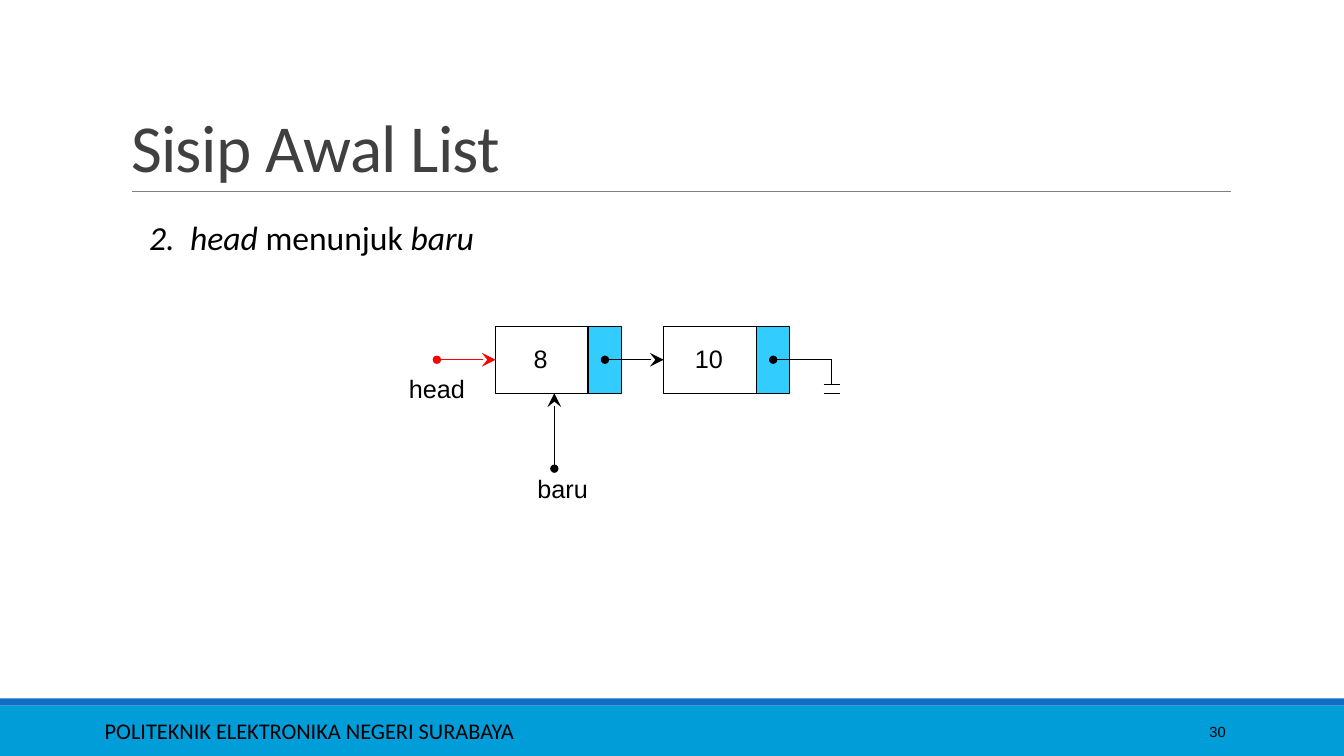
from lxml import etree
from pptx import Presentation
from pptx.dml.color import RGBColor
from pptx.enum import shapes, text
from pptx.oxml import ns
from pptx.util import Cm, Pt

BLACK = RGBColor(0x00, 0x00, 0x00)
RED = RGBColor(0xFF, 0x00, 0x00)
GREY = RGBColor(0x80, 0x80, 0x80)
TITLE_GREY = RGBColor(0x40, 0x40, 0x40)
POINTER_BLUE = RGBColor(0x33, 0xCC, 0xFF)
BAND_BLUE = RGBColor(0x00, 0x9D, 0xD9)
STRIPE_BLUE = RGBColor(0x0F, 0x6F, 0xC6)

deck = Presentation()
deck.slide_width, deck.slide_height = Cm(33.87), Cm(19.05)
page = deck.slides.add_slide(deck.slide_layouts[5])


def add_text(words, left, top, width, height, size, font="Arial",
             align=text.PP_ALIGN.CENTER, anchor=text.MSO_ANCHOR.TOP):
    box = page.shapes.add_textbox(Cm(left), Cm(top), Cm(width), Cm(height))
    frame = box.text_frame
    frame.word_wrap = True
    frame.vertical_anchor = anchor
    para = frame.paragraphs[0]
    para.text = words
    para.alignment = align
    para.font.size, para.font.name = Pt(size), font
    para.font.color.rgb = BLACK
    return para


def add_line(x1, y1, x2, y2, color=BLACK, width=0.75, dot=False, arrow=False):
    line = page.shapes.add_connector(
        shapes.MSO_CONNECTOR.STRAIGHT, Cm(x1), Cm(y1), Cm(x2), Cm(y2))
    line.line.color.rgb = color
    line.line.width = Pt(width)
    outline = line.line._get_or_add_ln()
    if dot:
        etree.SubElement(outline, ns.qn("a:headEnd"), type="oval")
    if arrow:
        etree.SubElement(outline, ns.qn("a:tailEnd"), type="stealth", w="lg", len="lg")
    etree.SubElement(line._element.spPr, ns.qn("a:effectLst"))


# Footer bands, footer text and page number
for top, height, color in ((17.78, 1.27, BAND_BLUE), (17.6, 0.18, STRIPE_BLUE)):
    band = page.shapes.add_shape(
        shapes.MSO_SHAPE.RECTANGLE, 0, Cm(top), deck.slide_width, Cm(height))
    band.shadow.inherit = False
    band.fill.solid()
    band.fill.fore_color.rgb = color
    band.line.fill.background()
add_text("POLITEKNIK ELEKTRONIKA NEGERI SURABAYA", 2.39, 17.91, 21.36, 1.02, 16,
         "Calibri", text.PP_ALIGN.LEFT, text.MSO_ANCHOR.MIDDLE)
add_text("30", 27.51, 17.93, 3.63, 1.02, 10.5,
         align=text.PP_ALIGN.RIGHT, anchor=text.MSO_ANCHOR.MIDDLE)

# Title and its rule
title = page.shapes.title
title.left, title.top, title.width, title.height = Cm(3.05), Cm(0.79), Cm(27.94), Cm(4.04)
title.text_frame.text = "Sisip Awal List"
title.text_frame.auto_size = text.MSO_AUTO_SIZE.NONE
title.text_frame.vertical_anchor = text.MSO_ANCHOR.BOTTOM
para = title.text_frame.paragraphs[0]
para.alignment = text.PP_ALIGN.LEFT
para.line_spacing = 0.85
span = para.runs[0]
span.font.size, span.font.name = Pt(48), "Calibri"
span.font.color.rgb = TITLE_GREY
span._r.get_or_add_rPr().set("spc", "-50")
add_line(3.33, 4.83, 31.01, 4.83, GREY, 0.5)

# Numbered step
step = add_text("", 3.51, 5.33, 11.86, 1.27, 24, "Calibri", text.PP_ALIGN.LEFT)
numbering = step._p.get_or_add_pPr()
numbering.set("marL", str(Cm(1.03)))
numbering.set("indent", str(-Cm(1.03)))
numbering.insert(0, etree.Element(ns.qn("a:buAutoNum"), type="arabicPeriod", startAt="2"))
for words, italic in (("head ", True), ("menunjuk ", False), ("baru", True)):
    span = step.add_run()
    span.text = words
    span.font.italic = italic

# List nodes: a value cell and a pointer cell each
NODE_LEFT, NODE_TOP, NODE_PITCH = 12.49, 8.22, 4.24
VALUE_WIDTH, POINTER_WIDTH, NODE_HEIGHT = 2.33, 0.85, 1.69
MIDDLE = NODE_TOP + NODE_HEIGHT / 2
LINK = 1.48
for index, value in enumerate(("8", "10")):
    left = NODE_LEFT + index * NODE_PITCH
    pointer_left = left + VALUE_WIDTH
    for cell_left, width, color in ((left, VALUE_WIDTH, None),
                                    (pointer_left, POINTER_WIDTH, POINTER_BLUE)):
        cell = page.shapes.add_shape(
            shapes.MSO_SHAPE.RECTANGLE, Cm(cell_left), Cm(NODE_TOP),
            Cm(width), Cm(NODE_HEIGHT))
        cell.shadow.inherit = False
        if color is None:
            cell.fill.background()
        else:
            cell.fill.solid()
            cell.fill.fore_color.rgb = color
        cell.line.color.rgb = BLACK
        cell.line.width = Pt(0.75)
    add_text(value, left + 0.5, 8.53, 1.27, 1.02, 18)
    dot_x = pointer_left + POINTER_WIDTH / 2
    add_line(dot_x, MIDDLE, dot_x + LINK, MIDDLE, dot=True, arrow=index == 0)

# Null end of the list
null_x = dot_x + LINK
add_line(null_x, MIDDLE, null_x, 9.7)
for y in (9.7, 9.91):
    add_line(null_x - 0.21, y, null_x + 0.21, y)

# Pointers head and baru
add_line(NODE_LEFT - LINK, MIDDLE, NODE_LEFT, MIDDLE, RED, dot=True, arrow=True)
add_text("head", 9.53, 9.28, 2.96, 1.02, 18)
add_line(13.97, 11.81, 13.97, NODE_TOP + NODE_HEIGHT, dot=True, arrow=True)
add_text("baru", 12.7, 11.81, 2.96, 1.02, 18)

deck.save("out.pptx")
